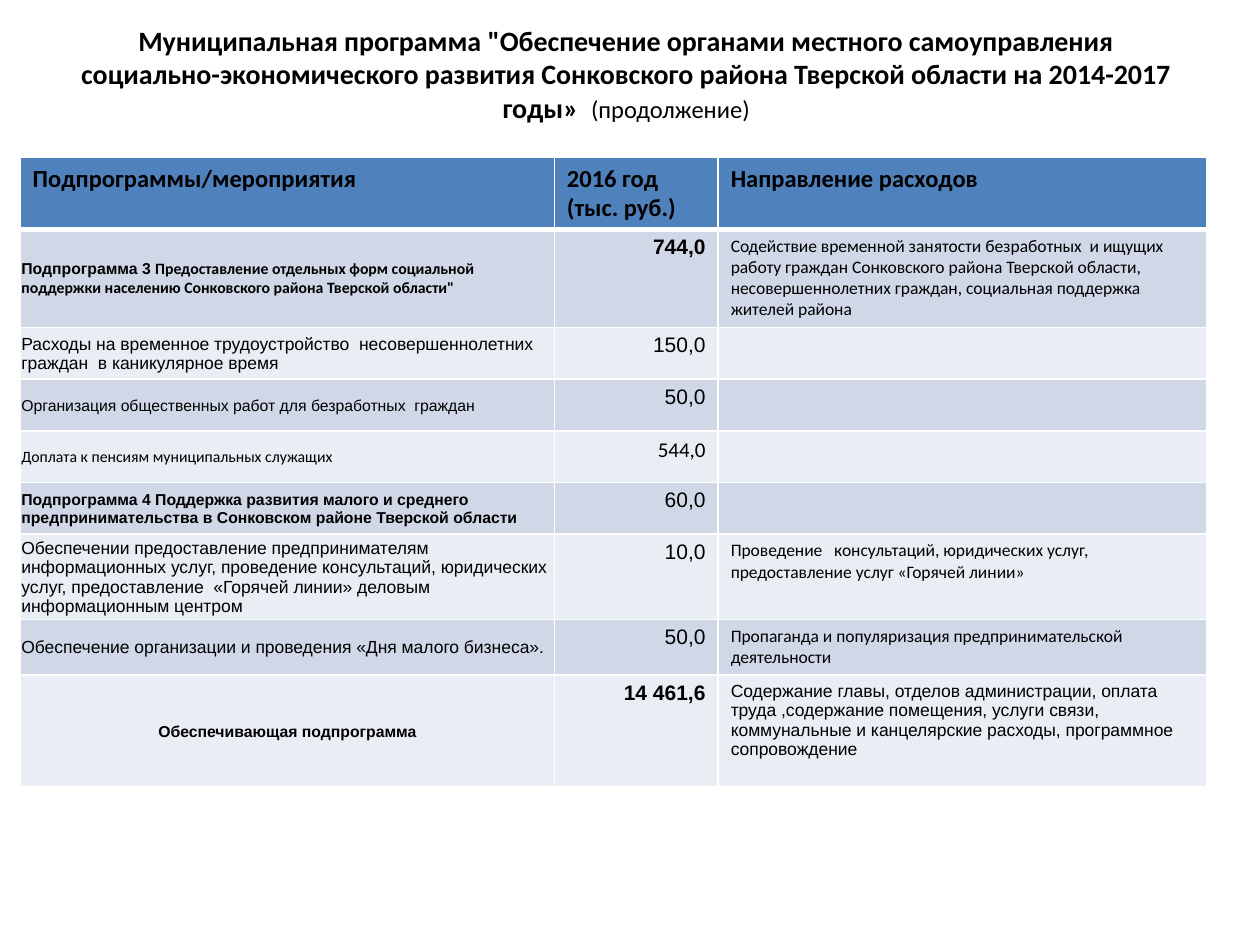
import pptx
import pptx.dml.color
import pptx.enum.text
import pptx.oxml
import pptx.oxml.ns
import pptx.util

Inches, Pt = pptx.util.Inches, pptx.util.Pt
RGBColor = pptx.dml.color.RGBColor
ALIGN, ANCHOR = pptx.enum.text.PP_ALIGN, pptx.enum.text.MSO_ANCHOR

BLACK = RGBColor(0x00, 0x00, 0x00)
WHITE = RGBColor(0xFF, 0xFF, 0xFF)
HEADER_BLUE = RGBColor(0x4F, 0x81, 0xBD)
BANDS = (RGBColor(0xD0, 0xD8, 0xE8), RGBColor(0xE9, 0xED, 0xF4))

# Content: a run is (text, font, size, bold)
TITLE = [
    ('Муниципальная программа "Обеспечение органами местного самоуправления '
     'социально-экономического развития Сонковского района Тверской области '
     'на 2014-2017 годы»  ', "Calibri", 16, True),
    ("(продолжение)", "Calibri", 14, False),
]
HEADERS = ["Подпрограммы/мероприятия", "2016 год (тыс. руб.)", "Направление расходов"]

# Row height, runs of the activity, amount, purpose
ROWS = [
    (0.78,
     [("Подпрограмма 3 ", "Arial", 9, True),
      ("Предоставление отдельных форм социальной поддержки населению "
       'Сонковского района Тверской области"', "Calibri", 9, True)],
     [("744,0", "Arial", 12, True)],
     [("Содействие временной занятости безработных  и ищущих работу граждан "
       "Сонковского района Тверской области, несовершеннолетних граждан, "
       "социальная поддержка жителей района", "Calibri", 10, False)]),
    (0.41,
     [("Расходы на временное трудоустройство  несовершеннолетних граждан  "
       "в каникулярное время", "Arial", 10, False)],
     [("150,0", "Arial", 12, False)], []),
    (0.41,
     [("Организация общественных работ для безработных  граждан", "Arial", 9, False)],
     [("50,0", "Arial", 12, False)], []),
    (0.41,
     [("Доплата к пенсиям муниципальных служащих", "Calibri", 9, False)],
     [("544,0", "Calibri", 12, False)], []),
    (0.41,
     [("Подпрограмма 4 Поддержка развития малого и среднего "
       "предпринимательства в Сонковском районе Тверской области", "Arial", 9, True)],
     [("60,0", "Arial", 12, False)], []),
    (0.63,
     [("Обеспечении предоставление предпринимателям информационных услуг, "
       "проведение консультаций, юридических услуг, предоставление  "
       "«Горячей линии» деловым информационным центром", "Arial", 10, False)],
     [("10,0", "Arial", 12, False)],
     [("Проведение   консультаций, юридических услуг, предоставление услуг "
       "«Горячей линии»", "Calibri", 10, False)]),
    (0.44,
     [("Обеспечение организации и проведения «Дня малого бизнеса».",
       "Arial", 10, False)],
     [("50,0", "Arial", 12, False)],
     [("Пропаганда и популяризация предпринимательской деятельности",
       "Calibri", 10, False)]),
    (0.89,
     [("Обеспечивающая подпрограмма", "Arial", 9, True)],
     [("14 461,6", "Arial", 12, True)],
     [("Содержание главы, отделов администрации, оплата труда ,содержание "
       "помещения, услуги связи, коммунальные и канцелярские расходы, "
       "программное сопровождение", "Arial", 10, False)]),
]
COLUMN_WIDTHS = [4.24, 1.3, 3.88]
HEADER_HEIGHT = 0.57


def write_runs(frame, runs, align=ALIGN.LEFT):
    paragraph = frame.paragraphs[0]
    paragraph.alignment = align
    for text, font, size, bold in runs:
        run = paragraph.add_run()
        run.text = text
        run.font.name = font
        run.font.size = Pt(size)
        run.font.bold = bold
        run.font.color.rgb = BLACK


def style_cell(cell, fill, top=1, bottom=1):
    cell.fill.solid()
    cell.fill.fore_color.rgb = fill
    properties = cell._tc.get_or_add_tcPr()
    sides = (("lnL", 1), ("lnR", 1), ("lnT", top), ("lnB", bottom))
    for index, (side, width) in enumerate(sides):
        border = pptx.oxml.parse_xml(
            f'<a:{side} {pptx.oxml.ns.nsdecls("a")} w="{Pt(width)}">'
            f'<a:solidFill><a:srgbClr val="{WHITE}"/></a:solidFill></a:{side}>')
        properties.insert(index, border)


deck = pptx.Presentation()
deck.slide_width, deck.slide_height = Inches(10), Inches(7.5)
slide = deck.slides.add_slide(deck.slide_layouts[6])

# Title
title = slide.shapes.add_textbox(Inches(0.47), 0, Inches(9), Inches(1.17)).text_frame
title.word_wrap = True
title.vertical_anchor = ANCHOR.MIDDLE
write_runs(title, TITLE, ALIGN.CENTER)

# Table grid
heights = [HEADER_HEIGHT] + [row[0] for row in ROWS]
programme = slide.shapes.add_table(
    len(heights), len(COLUMN_WIDTHS), Inches(0.16), Inches(1.25),
    Inches(sum(COLUMN_WIDTHS)), Inches(sum(heights))).table
for column, width in zip(programme.columns, COLUMN_WIDTHS):
    column.width = Inches(width)
for row, height in zip(programme.rows, heights):
    row.height = Inches(height)

# Header row
for col, heading in enumerate(HEADERS):
    cell = programme.cell(0, col)
    style_cell(cell, HEADER_BLUE, bottom=3)
    write_runs(cell.text_frame, [(heading, "Calibri", 14, True)])

# Body rows
for number, (_, *contents) in enumerate(ROWS, start=1):
    last = number == len(ROWS)
    aligns = (ALIGN.CENTER if last else ALIGN.LEFT, ALIGN.RIGHT, ALIGN.LEFT)
    for col, (runs, align) in enumerate(zip(contents, aligns)):
        cell = programme.cell(number, col)
        style_cell(cell, BANDS[(number - 1) % 2], top=3 if number == 1 else 1)
        write_runs(cell.text_frame, runs, align)
    activity = programme.cell(number, 0)
    activity.vertical_anchor = ANCHOR.MIDDLE
    activity.margin_left = activity.margin_right = activity.margin_top = Inches(0.01)
    activity.margin_bottom = 0

deck.save("out.pptx")
